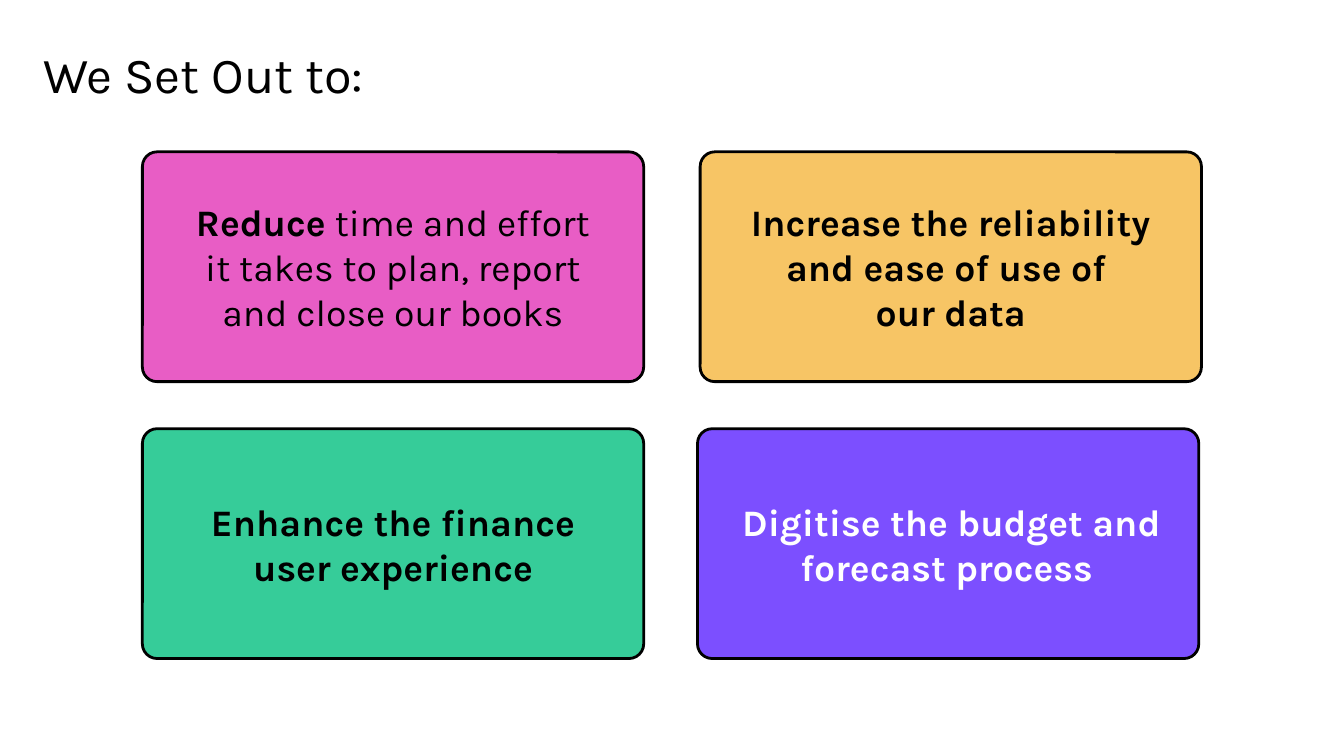
"""Build the goals slide: a title above a two-by-two grid of cards."""
from pptx import Presentation
from pptx.dml.color import RGBColor
from pptx.enum.shapes import MSO_SHAPE
from pptx.enum.text import MSO_ANCHOR, PP_ALIGN
from pptx.util import Inches, Pt

ROUNDED = MSO_SHAPE.ROUNDED_RECTANGLE
TOP, MIDDLE = MSO_ANCHOR.TOP, MSO_ANCHOR.MIDDLE
LEFT, CENTER = PP_ALIGN.LEFT, PP_ALIGN.CENTER

COLORS = {
    "black": "000000",
    "white": "FFFFFF",
    "pink": "E85DC5",
    "amber": "F7C565",
    "green": "36CC99",
    "violet": "7C4FFF",
}

GRID_LEFT, GRID_TOP = 1.06, 1.13
CARD_W, CARD_H = 3.73, 1.71
COLUMN_STEP, ROW_STEP = 4.15, 2.06
PAD_X, PAD_Y = 0.23, 0.2

GOALS = [
    ("pink", "black", 0, 0, [[
        ("Reduce", True),
        (" time and effort it takes to plan, report and close our books", False),
    ]]),
    ("amber", "black", 0, 0, [
        [("Increase the reliability and ease of use of ", True)],
        [("our data", True)],
    ]),
    ("green", "black", 0, 0, [[("Enhance the finance user experience", True)]]),
    ("violet", "white", -0.02, 0.05, [[("Digitise the budget and forecast process ", True)]]),
]


def rgb(name):
    return RGBColor.from_string(COLORS[name])


def add_run(paragraph, text, size, color, bold):
    run = paragraph.add_run()
    run.text = text
    run.font.name = "Karla"
    run.font.size = Pt(size)
    run.font.bold = bold
    run.font.color.rgb = rgb(color)


prs = Presentation()
prs.slide_width = Inches(10)
prs.slide_height = prs.slide_width * 9 // 16
slide = prs.slides.add_slide(prs.slide_layouts[5])
slide.background.fill.solid()
slide.background.fill.fore_color.rgb = rgb("white")

title = slide.shapes.title
title.left, title.top = Inches(0.22), Inches(0.22)
title.width, title.height = Inches(9.44), Inches(0.63)
heading = title.text_frame
heading.vertical_anchor = TOP
heading.margin_left = heading.margin_right = Inches(0.1)
heading.margin_top = heading.margin_bottom = Inches(0.1)
heading.paragraphs[0].alignment = LEFT
add_run(heading.paragraphs[0], "We Set Out to:", 27, "black", False)

for index, (fill, ink, shift, extra_width, lines) in enumerate(GOALS):
    row, column = divmod(index, 2)
    left = GRID_LEFT + column * COLUMN_STEP + shift
    top = GRID_TOP + row * ROW_STEP

    card = slide.shapes.add_shape(
        ROUNDED, Inches(left), Inches(top), Inches(CARD_W), Inches(CARD_H))
    card.adjustments[0] = 0.064
    card.shadow.inherit = False
    card.fill.solid()
    card.fill.fore_color.rgb = rgb(fill)
    card.line.color.rgb = rgb("black")
    card.line.width = Pt(1.5)

    goal = slide.shapes.add_textbox(
        Inches(left + PAD_X), Inches(top + PAD_Y),
        Inches(CARD_W - 2 * PAD_X + extra_width), Inches(CARD_H - 2 * PAD_Y))
    frame = goal.text_frame
    frame.word_wrap = True
    frame.vertical_anchor = MIDDLE
    paragraph = frame.paragraphs[0]
    paragraph.alignment = CENTER
    for number, line in enumerate(lines):
        if number:
            paragraph.add_line_break()
        for text, bold in line:
            add_run(paragraph, text, 20, ink, bold)

prs.save("out.pptx")
